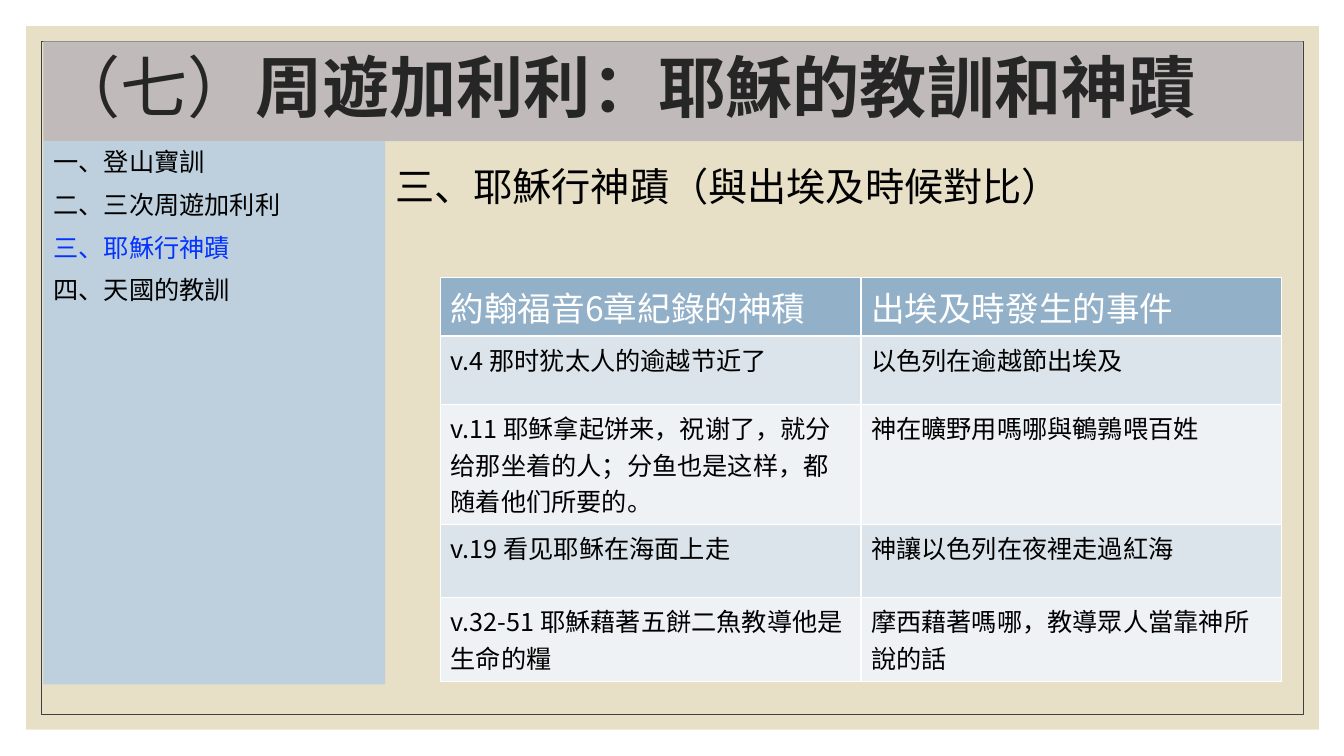
from lxml.etree import SubElement
from pptx import Presentation
from pptx.dml.color import RGBColor
from pptx.enum.shapes import MSO_SHAPE
from pptx.enum.text import MSO_ANCHOR, MSO_AUTO_SIZE, PP_ALIGN
from pptx.oxml.ns import qn
from pptx.util import Inches, Pt

COLORS = {
    "sand": "E7E0C7", "frame": "404040", "banner": "C0BABA", "title": "262626",
    "sidebar": "BED0DE", "text": "000000", "current": "0432FF",
    "header": "92B0C8", "odd_row": "DCE4EB", "even_row": "EEF2F5", "white": "FFFFFF",
}
FONT = "Noto Sans CJK SC"
TITLE = [("（七）", False), ("周遊加利利：耶穌的教訓和神蹟", True)]
TOPICS = ["一、登山寶訓", "二、三次周遊加利利", "三、耶穌行神蹟", "四、天國的教訓"]
CURRENT_TOPIC = TOPICS[2]
HEADING = "三、耶穌行神蹟（與出埃及時候對比）"
COMPARISON = [
    ("約翰福音6章紀錄的神積", "出埃及時發生的事件"),
    ("v.4 那时犹太人的逾越节近了", "以色列在逾越節出埃及"),
    ("v.11 耶稣拿起饼来，祝谢了，就分给那坐着的人；分鱼也是这样，都随着他们所要的。",
     "神在曠野用嗎哪與鵪鶉喂百姓"),
    ("v.19 看见耶稣在海面上走", "神讓以色列在夜裡走過紅海"),
    ("v.32-51 耶穌藉著五餅二魚教導他是生命的糧", "摩西藉著嗎哪，教導眾人當靠神所說的話"),
]
ROW_HEIGHTS = [0.58, 0.68, 1.18, 0.73, 0.83]


def rgb(name):
    return RGBColor.from_string(COLORS[name])


def write(paragraph, text, size=18, color="text", bold=False):
    run = paragraph.add_run()
    run.text = text
    run.font.name = FONT
    run.font.size = Pt(size)
    run.font.bold = bold
    run.font.color.rgb = rgb(color)
    SubElement(run.font._element, qn("a:ea"), typeface=FONT)


class LessonSlide:
    """Builds the parts of one lesson slide in a shared style."""

    def __init__(self, deck):
        self.slide = deck.slides.add_slide(deck.slide_layouts[3])

    def backdrop(self, box, depth, fill=None, line=None):
        panel = self.slide.shapes.add_shape(MSO_SHAPE.RECTANGLE, *map(Inches, box))
        panel.shadow.inherit = False
        if fill:
            panel.fill.solid()
            panel.fill.fore_color.rgb = rgb(fill)
        else:
            panel.fill.background()
        if line:
            panel.line.color.rgb = rgb(line)
            panel.line.width = Pt(0.5)
        else:
            panel.line.fill.background()
        self.slide.shapes._spTree.insert(2 + depth, panel._element)

    def placeholder(self, index, box, fill=None, anchor=MSO_ANCHOR.TOP):
        holder = self.slide.placeholders[index]
        holder.left, holder.top, holder.width, holder.height = map(Inches, box)
        if fill:
            holder.fill.solid()
            holder.fill.fore_color.rgb = rgb(fill)
        frame = holder.text_frame
        frame.word_wrap = True
        frame.auto_size = MSO_AUTO_SIZE.NONE
        frame.vertical_anchor = anchor
        return frame

    def title(self, pieces, box):
        frame = self.placeholder(0, box, "banner", MSO_ANCHOR.MIDDLE)
        heading = frame.paragraphs[0]
        heading.alignment = PP_ALIGN.LEFT
        heading.line_spacing = 0.9
        for text, bold in pieces:
            write(heading, text, size=48, color="title", bold=bold)

    def body(self, index, lines, box, size=18, fill=None, current=None):
        frame = self.placeholder(index, box, fill)
        for number, text in enumerate(lines):
            item = frame.add_paragraph() if number else frame.paragraphs[0]
            item.space_before = Pt(9)
            properties = item._p.get_or_add_pPr()
            properties.set("marL", "0")
            properties.set("indent", "0")
            SubElement(properties, qn("a:buNone"))
            write(item, text, size=size, color="current" if text == current else "text")

    def table(self, rows, heights, box):
        table = self.slide.shapes.add_table(
            len(rows), len(rows[0]), *map(Inches, box)).table
        for number, (texts, height) in enumerate(zip(rows, heights)):
            table.rows[number].height = Inches(height)
            fill = ("odd_row" if number % 2 else "even_row") if number else "header"
            for column, text in enumerate(texts):
                cell = table.cell(number, column)
                cell.fill.solid()
                cell.fill.fore_color.rgb = rgb(fill)
                write(cell.text_frame.paragraphs[0], text,
                      size=18 if number else 24, color="text" if number else "white")


def main():
    deck = Presentation()
    deck.slide_width, deck.slide_height = Inches(13.33), Inches(7.5)
    lesson = LessonSlide(deck)
    lesson.backdrop((0.26, 0.26, 12.82, 6.98), 0, fill="sand")
    lesson.backdrop((0.41, 0.41, 12.52, 6.68), 1, line="frame")
    lesson.title(TITLE, (0.43, 0.41, 12.49, 0.99))
    lesson.body(1, TOPICS, (0.43, 1.4, 3.39, 5.39), fill="sidebar", current=CURRENT_TOPIC)
    lesson.body(2, [HEADING], (3.82, 1.56, 8.87, 5.23), size=28)
    lesson.table(COMPARISON, ROW_HEIGHTS, (4.37, 2.75, 8.34, sum(ROW_HEIGHTS)))
    deck.save("out.pptx")


if __name__ == "__main__":
    main()
